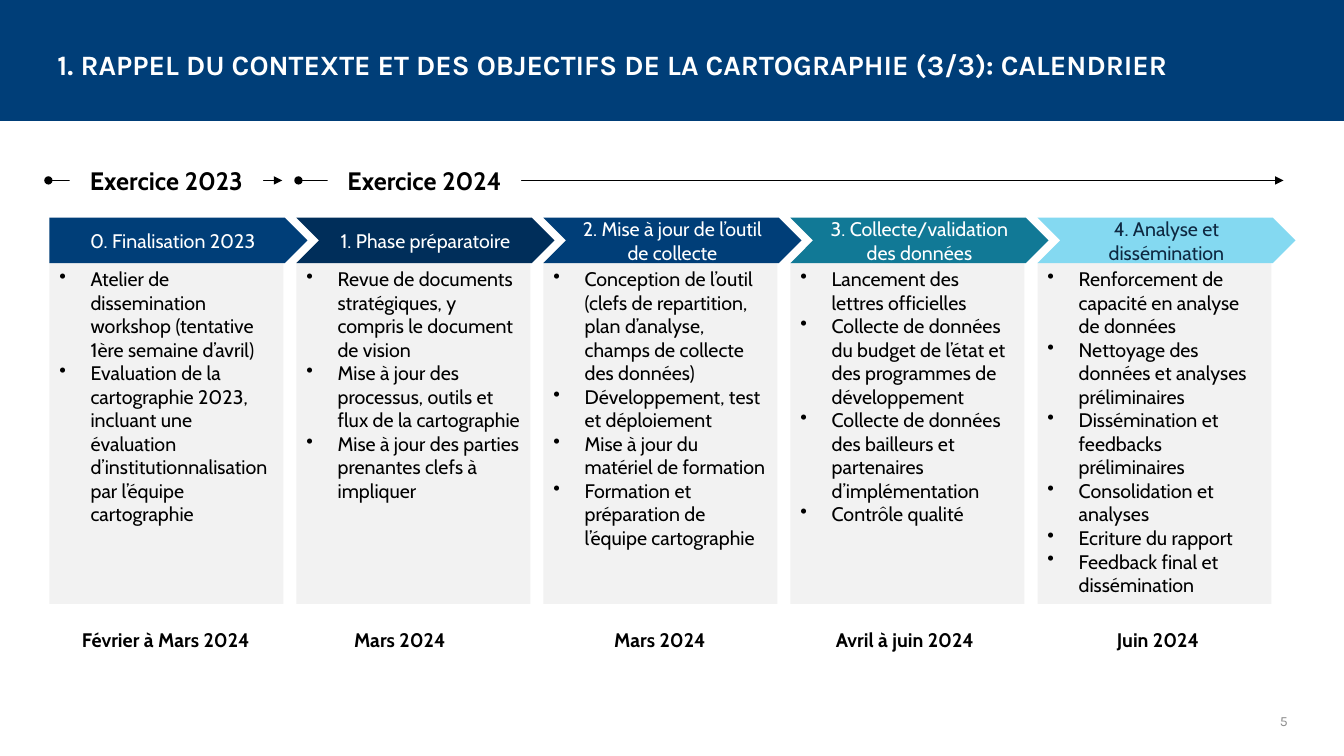
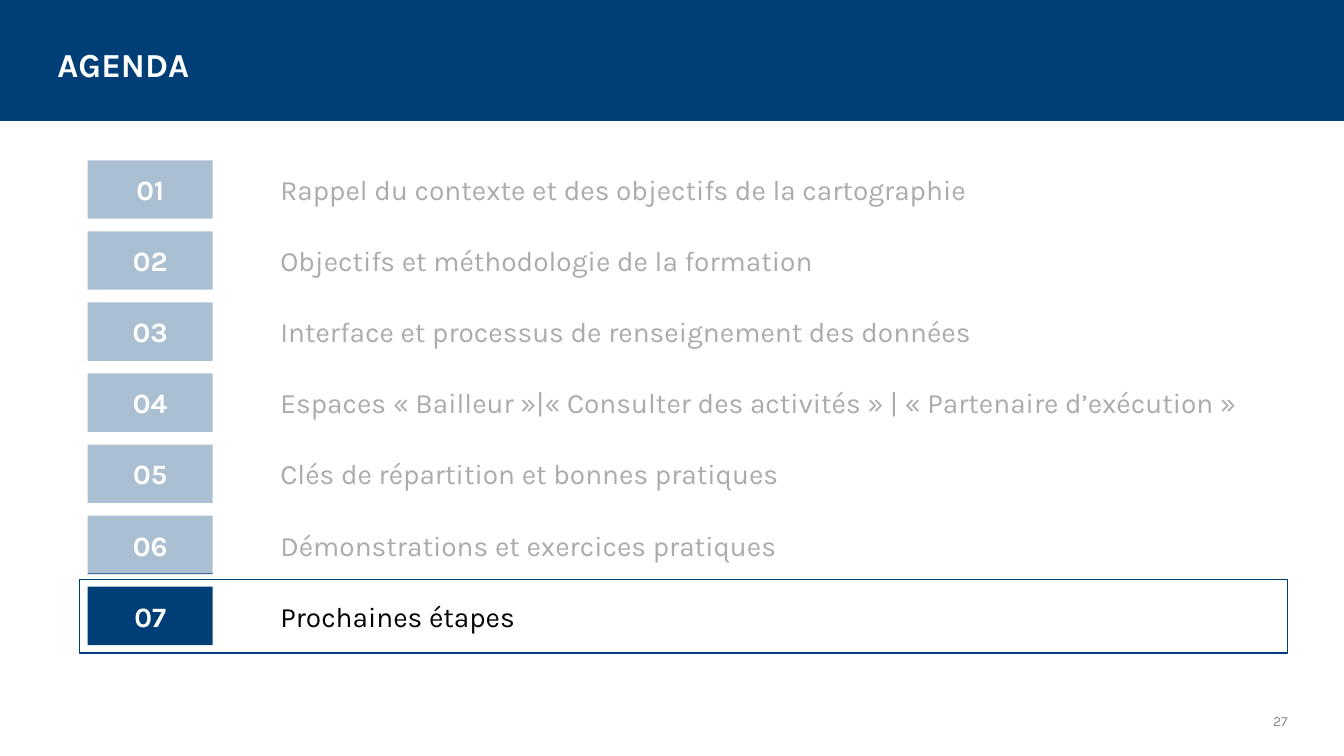
from lxml import etree
from pptx import Presentation
from pptx.dml.color import RGBColor
from pptx.enum.shapes import MSO_CONNECTOR, MSO_SHAPE
from pptx.enum.text import MSO_ANCHOR, MSO_AUTO_SIZE, PP_ALIGN
from pptx.oxml.ns import qn
from pptx.util import Inches, Pt

RECT, CHEVRON, PENTAGON = MSO_SHAPE.RECTANGLE, MSO_SHAPE.CHEVRON, MSO_SHAPE.PENTAGON
STRAIGHT = MSO_CONNECTOR.STRAIGHT
LEFT, CENTER, RIGHT = PP_ALIGN.LEFT, PP_ALIGN.CENTER, PP_ALIGN.RIGHT
TOP, MIDDLE = MSO_ANCHOR.TOP, MSO_ANCHOR.MIDDLE

BLUE = RGBColor(0x00, 0x3E, 0x78)
NAVY = RGBColor(0x00, 0x2E, 0x5A)
TEAL = RGBColor(0x11, 0x79, 0x96)
SKY = RGBColor(0x84, 0xD9, 0xF1)
INK = RGBColor(0x0E, 0x28, 0x41)
PANEL = RGBColor(0xF2, 0xF2, 0xF2)
GREY = RGBColor(0x8C, 0x8C, 0x8C)
WHITE = RGBColor(0xFF, 0xFF, 0xFF)
BLACK = RGBColor(0x00, 0x00, 0x00)

HEADING_FONT, BODY_FONT = "Karla", "Cabin"
SLIDE_W, SLIDE_H, BAND_H = 13.33, 7.5, 1.2
TITLE_ONLY = 5


class Deck:
    """Shared style and the slide being built; lengths are given in inches."""

    def __init__(self):
        self.prs = Presentation()
        self.prs.slide_width = Inches(SLIDE_W)
        self.prs.slide_height = Inches(SLIDE_H)
        self.slide = None

    def new_slide(self, title, number, title_size):
        self.slide = self.prs.slides.add_slide(self.prs.slide_layouts[TITLE_ONLY])
        # The band goes behind the title placeholder
        band = self.box(0, 0, SLIDE_W, BAND_H, fill=BLUE)
        self.slide.shapes._spTree.insert(2, band._element)
        heading = self.slide.shapes.title
        heading.left, heading.top = Inches(0.47), Inches(0.19)
        heading.width, heading.height = Inches(12.4), Inches(0.9)
        self.set_text(heading, [title], title_size, WHITE, HEADING_FONT, bold=True,
                      align=LEFT, anchor=MIDDLE, insets=(0.1, 0))
        self.label(9.87, 6.95, 3, 0.4, str(number), size=10, color=GREY,
                   font=HEADING_FONT, align=RIGHT, anchor=MIDDLE)

    def set_text(self, shape, lines, size, color=BLACK, font=BODY_FONT, bold=False,
                 align=CENTER, anchor=TOP, insets=(0.1, 0.05), spacing=(0, 0), bullets=False):
        frame = shape.text_frame
        frame.word_wrap = True
        frame.auto_size = MSO_AUTO_SIZE.NONE
        frame.vertical_anchor = anchor
        frame.margin_left = frame.margin_right = Inches(insets[0])
        frame.margin_top = frame.margin_bottom = Inches(insets[1])
        for index, line in enumerate(lines):
            paragraph = frame.add_paragraph() if index else frame.paragraphs[0]
            paragraph.text = line
            paragraph.alignment = align
            paragraph.space_before, paragraph.space_after = map(Pt, spacing)
            paragraph.font.name = font
            paragraph.font.size = Pt(size)
            paragraph.font.bold = bold
            paragraph.font.color.rgb = color
            if bullets:
                self.add_bullet(paragraph)

    @staticmethod
    def add_bullet(paragraph):
        props = paragraph._p.get_or_add_pPr()
        props.set("marL", str(Inches(0.31)))
        props.set("indent", str(-Inches(0.31)))
        bullet = etree.Element(qn("a:buChar"), char="•")
        props.find(qn("a:defRPr")).addprevious(bullet)

    def box(self, x, y, w, h, kind=RECT, fill=None, opacity=None, line=None):
        shape = self.slide.shapes.add_shape(kind, Inches(x), Inches(y), Inches(w), Inches(h))
        shape.shadow.inherit = False
        if fill is None:
            shape.fill.background()
        else:
            shape.fill.solid()
            shape.fill.fore_color.rgb = fill
        if opacity is not None:
            color = shape._element.spPr.find(".//" + qn("a:srgbClr"))
            etree.SubElement(color, qn("a:alpha"), val=str(opacity * 1000))
        if line is None:
            shape.line.fill.background()
        else:
            shape.line.color.rgb = line
            shape.line.width = Pt(1)
        return shape

    def label(self, x, y, w, h, content, **style):
        label = self.slide.shapes.add_textbox(Inches(x), Inches(y), Inches(w), Inches(h))
        self.set_text(label, [content], **style)

    def span_arrow(self, start, end, y):
        """Horizontal line from a dot to an arrowhead."""
        arrow = self.slide.shapes.add_connector(
            STRAIGHT, Inches(start), Inches(y), Inches(end), Inches(y))
        arrow.line.color.rgb = BLACK
        arrow.line.width = Pt(0.5)
        props = arrow._element.spPr
        line = props.find(qn("a:ln"))
        etree.SubElement(line, qn("a:headEnd"), type="oval")
        etree.SubElement(line, qn("a:tailEnd"), type="triangle")
        etree.SubElement(props, qn("a:effectLst"))


# Phase: heading, fill, heading colour, tasks, date, left edge of the date
PHASES = [
    ("0. Finalisation 2023", BLUE, WHITE, [
        "Atelier de dissemination workshop (tentative 1ère semaine d’avril)",
        "Evaluation de la cartographie 2023, incluant une évaluation "
        "d’institutionnalisation par l’équipe cartographie",
    ], "Février à Mars 2024", 0.62),
    ("1. Phase préparatoire", NAVY, WHITE, [
        "Revue de documents stratégiques, y compris le document de vision",
        "Mise à jour des processus, outils et flux de la cartographie",
        "Mise à jour des parties prenantes clefs à impliquer",
    ], "Mars 2024", 2.94),
    ("2. Mise à jour de l’outil de collecte", BLUE, WHITE, [
        "Conception de l’outil (clefs de repartition, plan d’analyse, "
        "champs de collecte des données)",
        "Développement, test et déploiement",
        "Mise à jour du matériel de formation",
        "Formation et préparation de l’équipe cartographie",
    ], "Mars 2024", 5.52),
    ("3. Collecte/validation des données", TEAL, WHITE, [
        "Lancement des lettres officielles",
        "Collecte de données du budget de l’état et des programmes de développement",
        "Collecte de données des bailleurs et partenaires d’implémentation",
        "Contrôle qualité",
    ], "Avril à juin 2024", 7.95),
    ("4. Analyse et dissémination", SKY, INK, [
        "Renforcement de capacité en analyse de données",
        "Nettoyage des données et analyses préliminaires",
        "Dissémination et feedbacks préliminaires",
        "Consolidation et analyses",
        "Ecriture du rapport",
        "Feedback final et dissémination",
    ], "Juin 2024", 10.46),
]

# Fiscal year: label, label left, arrow start, arrow end
YEARS = [
    ("Exercice 2023", 0.69, 0.48, 2.8),
    ("Exercice 2024", 3.25, 2.96, 12.73),
]

AGENDA = [
    "Rappel du contexte et des objectifs de la cartographie",
    "Objectifs et méthodologie de la formation",
    "Interface et processus de renseignement des données",
    "Espaces « Bailleur »|« Consulter des activités » | « Partenaire d’exécution »",
    "Clés de répartition et bonnes pratiques",
    "Démonstrations et exercices pratiques",
    "Prochaines étapes",
]


def build_calendar(deck):
    deck.new_slide("1. RAPPEL DU CONTEXTE ET DES OBJECTIFS DE LA CARTOGRAPHIE (3/3): CALENDRIER",
                   5, title_size=20)

    # Phase columns: task panel, arrow heading, date
    first_left, pitch = 0.49, 2.45
    for index, (heading, fill, color, tasks, date, date_left) in enumerate(PHASES):
        left = first_left + index * pitch
        panel = deck.box(left, 2.6, 2.32, 3.39, fill=PANEL)
        deck.set_text(panel, tasks, 14, align=LEFT, bullets=True)
        step = deck.box(left, 2.16, 2.56, 0.45, CHEVRON if index else PENTAGON, fill)
        deck.set_text(step, [heading], 14, color, anchor=MIDDLE)
        deck.label(date_left, 6.18, 2.05, 0.34, date, size=14, bold=True)

    # Fiscal years, each label masking part of its arrow
    for year, label_left, start, end in YEARS:
        deck.span_arrow(start, end, 1.79)
        label = deck.box(label_left, 1.59, 1.92, 0.4, fill=WHITE)
        deck.set_text(label, [year], 18, bold=True)


def build_agenda(deck):
    deck.new_slide("AGENDA", 27, title_size=24)
    frame_left, frame_width = 0.79, 11.98
    first_top, last_top, row_height = 1.59, 5.82, 0.58
    pitch = (last_top - first_top) / (len(AGENDA) - 1)

    # Frame around the current topic
    deck.box(frame_left, 5.75, frame_width, 0.73, line=BLUE)

    # Numbered topics
    for index, topic in enumerate(AGENDA):
        top = first_top + index * pitch
        number = deck.box(0.87, top, 1.24, row_height, fill=BLUE)
        deck.set_text(number, [f"{index + 1:02}"], 20, WHITE, HEADING_FONT, bold=True,
                      anchor=MIDDLE, insets=(0.1, 0.1), spacing=(4, 8))
        deck.label(2.78, top, 9.61, row_height, topic, size=20, font=HEADING_FONT,
                   align=LEFT, anchor=MIDDLE, insets=(0, 0), spacing=(4, 4))

    # Veil fading the topics already covered
    deck.box(frame_left, first_top, frame_width, 4.1, fill=WHITE, opacity=67)


def main():
    deck = Deck()
    build_calendar(deck)
    build_agenda(deck)
    deck.prs.save("out.pptx")


if __name__ == "__main__":
    main()
